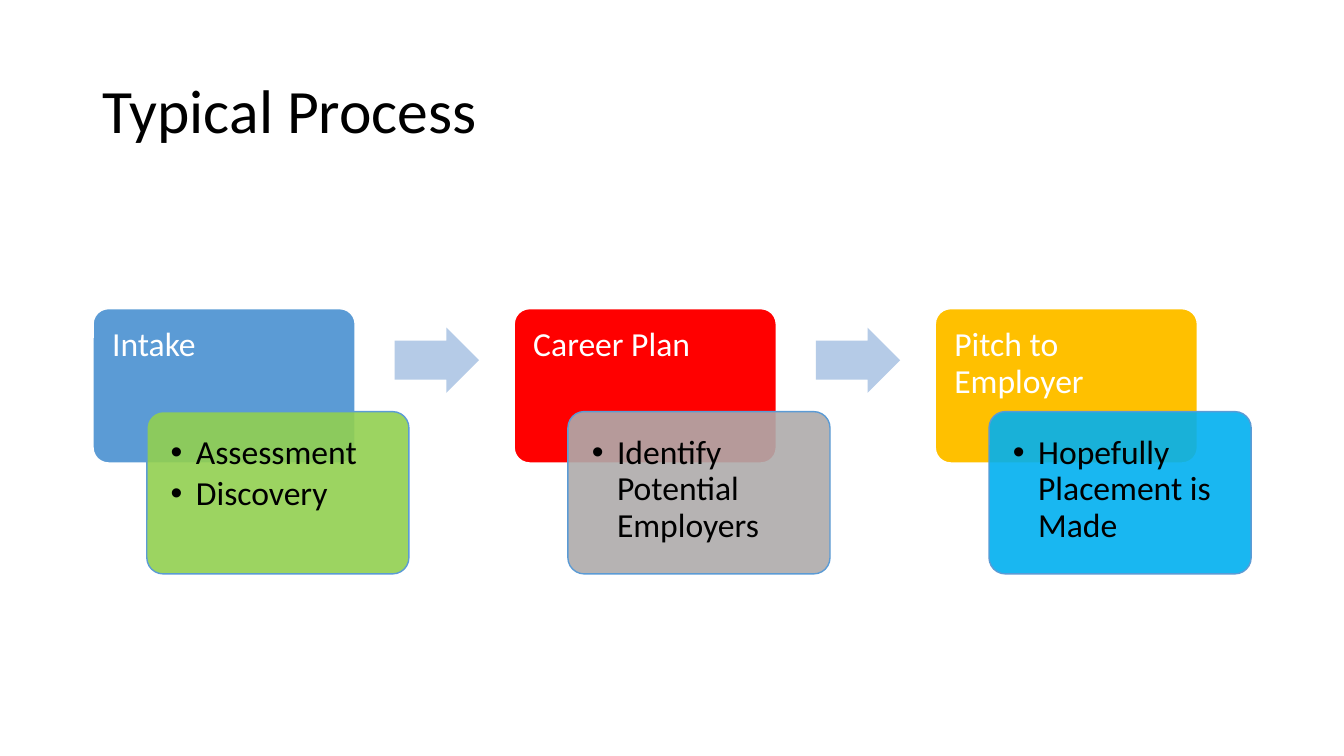
import pptx
import pptx.util
import pptx.dml.color
import pptx.enum.shapes
import pptx.enum.text
import pptx.oxml.ns
import lxml.etree

Pt = pptx.util.Pt
qn = pptx.oxml.ns.qn
SHAPE = pptx.enum.shapes.MSO_SHAPE
ANCHOR = pptx.enum.text.MSO_ANCHOR


def rgb(value):
    return pptx.dml.color.RGBColor.from_string(value)


def write(p, text, size=24, color="000000", font="Calibri", after=0, bullet=False):
    p.alignment = pptx.enum.text.PP_ALIGN.LEFT
    p.line_spacing = 0.9
    p.space_after = Pt(after)
    if bullet:
        pPr = p._p.get_or_add_pPr()
        pPr.set("marL", str(Pt(18)))
        pPr.set("indent", str(-Pt(18)))
        lxml.etree.SubElement(pPr, qn("a:buFont")).set("typeface", "Arial")
        lxml.etree.SubElement(pPr, qn("a:buChar")).set("char", "•")
    r = p.add_run()
    r.text = text
    r.font.name = font
    r.font.size = Pt(size)
    r.font.color.rgb = rgb(color)


class ProcessSlide:
    arrow_fill = "B5CBE7"
    detail_line = "5B9BD5"

    def __init__(self, prs):
        self.s = prs.slides.add_slide(prs.slide_layouts[5])

    def title(self, text, left, top, width, height):
        sp = self.s.shapes.title
        sp.left, sp.top, sp.width, sp.height = map(Pt, (left, top, width, height))
        tf = sp.text_frame
        tf.auto_size = pptx.enum.text.MSO_AUTO_SIZE.NONE
        tf.vertical_anchor = ANCHOR.MIDDLE
        write(tf.paragraphs[0], text, size=44)

    def shape(self, kind, left, top, width, height, fill, adjust, line=None, alpha=None):
        sp = self.s.shapes.add_shape(kind, *map(Pt, (left, top, width, height)))
        sp.shadow.inherit = False
        for i, value in enumerate(adjust):
            sp.adjustments[i] = value
        sp.fill.solid()
        sp.fill.fore_color.rgb = rgb(fill)
        if alpha:
            clr = sp._element.spPr.find(qn("a:solidFill")).find(qn("a:srgbClr"))
            lxml.etree.SubElement(clr, qn("a:alpha")).set("val", str(alpha * 1000))
        if line:
            sp.line.color.rgb = rgb(line)
            sp.line.width = Pt(1)
        else:
            sp.line.fill.background()
        return sp

    def box(self, left, top, width, height, fill, line, lines, inset, alpha=None, **fmt):
        sp = self.shape(SHAPE.ROUNDED_RECTANGLE, left, top, width, height,
                        fill, [0.1], line, alpha)
        tf = sp.text_frame
        tf.word_wrap = True
        tf.vertical_anchor = ANCHOR.TOP
        tf.margin_left = tf.margin_top = tf.margin_right = tf.margin_bottom = Pt(inset)
        for i, text in enumerate(lines):
            p = tf.add_paragraph() if i else tf.paragraphs[0]
            write(p, text, **fmt)

    def stage(self, left, top, name, fill, details, detail_fill):
        self.box(left, top, 187.2, 110.2, fill, "FFFFFF", [name], 10.4,
                 color="FFFFFF", after=8.4)
        self.box(left + 38.4, top + 73.5, 187.2, 115.9, detail_fill, self.detail_line,
                 details, 13.7, alpha=90, after=3.6, bullet=True)

    def arrow(self, left, top):
        self.shape(SHAPE.RIGHT_ARROW, left, top, 60.2, 46.6, self.arrow_fill, [0.6, 0.5])


STAGES = [
    ("Intake", "5B9BD5", ["Assessment", "Discovery"], "92D050"),
    ("Career Plan", "FF0000", ["Identify Potential Employers"], "AFABAB"),
    ("Pitch to Employer", "FFC000", ["Hopefully Placement is Made"], "00B0F0"),
]
LEFT, TOP, STEP = 66.5, 220.5, 300.8


def main():
    prs = pptx.Presentation()
    prs.slide_width, prs.slide_height = Pt(960), Pt(540)
    slide = ProcessSlide(prs)

    # Title
    slide.title("Typical Process", 66, 28.8, 828, 104.4)

    # Stages, with an arrow leading to each next one
    for i, stage in enumerate(STAGES):
        left = LEFT + i * STEP
        if i:
            slide.arrow(left - 85.3, TOP + 13.5)
        slide.stage(left, TOP, *stage)

    prs.save("out.pptx")


if __name__ == "__main__":
    main()
